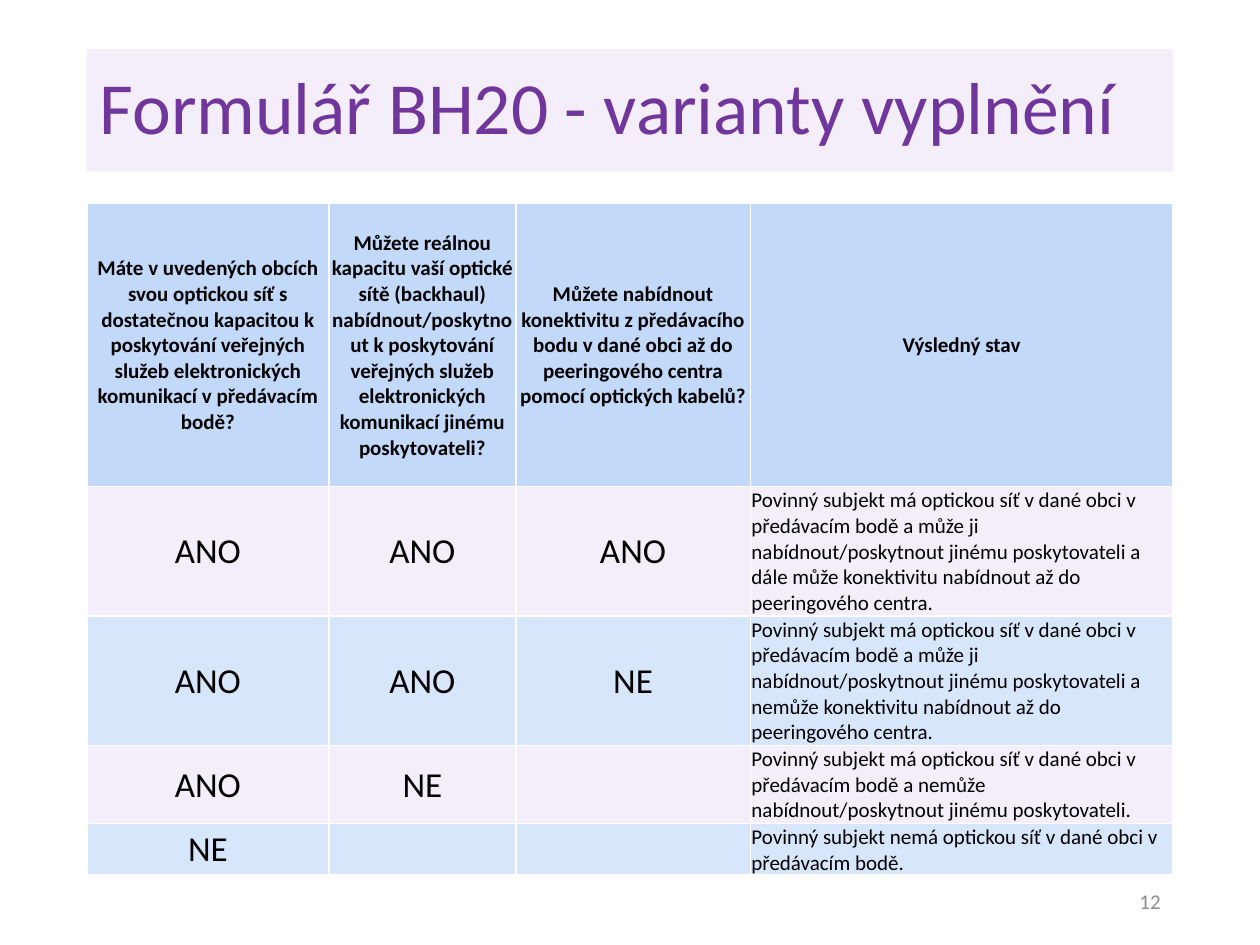
from dataclasses import dataclass

from lxml import etree
from pptx import Presentation
from pptx.dml.color import RGBColor
from pptx.enum.text import MSO_ANCHOR, MSO_AUTO_SIZE, PP_ALIGN
from pptx.oxml.ns import qn
from pptx.util import Inches, Pt

LEFT, CENTER, RIGHT = PP_ALIGN.LEFT, PP_ALIGN.CENTER, PP_ALIGN.RIGHT
TOP, MIDDLE = MSO_ANCHOR.TOP, MSO_ANCHOR.MIDDLE
NO_AUTOFIT = MSO_AUTO_SIZE.NONE
TITLE_ONLY = 5

FONT = "Calibri"
COLORS = {
    "purple": "70369B",
    "lilac": "EEE5F7",
    "blue": "C2D9FA",
    "black": "000000",
    "gray": "8C8C8C",
    "white": "FFFFFF",
}
BAND_OPACITY = 65
SLIDE_WIDTH, SLIDE_HEIGHT = Inches(10), Inches(7.5)


@dataclass(frozen=True)
class Area:
    """Place on the slide, in percent of its width and height."""
    left: float
    top: float
    width: float
    height: float

    def box(self) -> tuple:
        return (share_x(self.left), share_y(self.top),
                share_x(self.width), share_y(self.height))


@dataclass(frozen=True)
class TextStyle:
    size: float
    color: str = "black"
    bold: bool = False
    align: PP_ALIGN = LEFT
    anchor: MSO_ANCHOR = MIDDLE


@dataclass(frozen=True)
class Variant:
    """One way to fill in the form: the answers and the resulting state."""
    height: float
    answers: tuple
    result: str


def share_x(percent: float) -> int:
    return round(SLIDE_WIDTH * percent / 100)


def share_y(percent: float) -> int:
    return round(SLIDE_HEIGHT * percent / 100)


TITLE_AREA = Area(6.9, 5.2, 86.2, 12.93)
TABLE_AREA = Area(6.9, 21.5, 86.2, 71.2)
NUMBER_AREA = Area(70.6, 92.67, 22.5, 5.33)
COLUMN_WIDTHS = (19.2, 14.85, 18.6, 33.55)
HEADER_HEIGHT = 30

TITLE_STYLE = TextStyle(42, "purple")
NUMBER_STYLE = TextStyle(12, "gray", align=RIGHT)
HEADER_STYLE = TextStyle(12, bold=True, align=CENTER)
ANSWER_STYLE = TextStyle(20, align=CENTER)
RESULT_STYLE = TextStyle(12, anchor=TOP)

HEADERS = (
    "Máte v uvedených obcích svou optickou síť s dostatečnou kapacitou k "
    "poskytování veřejných služeb elektronických komunikací v předávacím bodě?",
    "Můžete reálnou kapacitu vaší optické sítě (backhaul) nabídnout/poskytnout "
    "k poskytování veřejných služeb elektronických komunikací jinému "
    "poskytovateli?",
    "Můžete nabídnout konektivitu z předávacího bodu v dané obci až do "
    "peeringového centra pomocí optických kabelů?",
    "Výsledný stav",
)
VARIANTS = (
    Variant(13.7, ("ANO", "ANO", "ANO"),
            "Povinný subjekt má optickou síť v dané obci v předávacím bodě a "
            "může ji nabídnout/poskytnout jinému poskytovateli a dále může "
            "konektivitu nabídnout až do peeringového centra."),
    Variant(13.7, ("ANO", "ANO", "NE"),
            "Povinný subjekt má optickou síť v dané obci v předávacím bodě a "
            "může ji nabídnout/poskytnout jinému poskytovateli a nemůže "
            "konektivitu nabídnout až do peeringového centra."),
    Variant(8.25, ("ANO", "NE", ""),
            "Povinný subjekt má optickou síť v dané obci v předávacím bodě a "
            "nemůže nabídnout/poskytnout jinému poskytovateli."),
    Variant(5.45, ("NE", "", ""),
            "Povinný subjekt nemá optickou síť v dané obci v předávacím bodě."),
)


def set_fill(target, properties, color: str, opacity: int = 100) -> None:
    """Fill a shape or cell; properties is its spPr or tcPr element."""
    target.fill.solid()
    target.fill.fore_color.rgb = RGBColor.from_string(COLORS[color])
    if opacity < 100:
        color_element = properties.find(qn("a:solidFill"))[0]
        etree.SubElement(color_element, qn("a:alpha"), val=str(opacity * 1000))


def write(text_frame, text: str, style: TextStyle):
    paragraph = text_frame.paragraphs[0]
    if text:
        paragraph.add_run().text = text
    paragraph.alignment = style.align
    font = paragraph.font
    font.name, font.size, font.bold = FONT, Pt(style.size), style.bold
    font.color.rgb = RGBColor.from_string(COLORS[style.color])
    return paragraph


def add_borders(properties) -> None:
    for side in ("a:lnL", "a:lnR", "a:lnT", "a:lnB"):
        line = etree.SubElement(properties, qn(side), w=str(Pt(1)))
        fill = etree.SubElement(line, qn("a:solidFill"))
        etree.SubElement(fill, qn("a:srgbClr"), val=COLORS["white"])


def fill_cell(cell, text: str, style: TextStyle, color: str, opacity: int) -> None:
    cell.margin_left = cell.margin_right = cell.margin_top = Inches(0.01)
    cell.margin_bottom = 0
    cell.vertical_anchor = style.anchor
    properties = cell._tc.tcPr
    add_borders(properties)
    set_fill(cell, properties, color, opacity)
    write(cell.text_frame, text, style)


def add_title(slide) -> None:
    title = slide.shapes.title
    title.left, title.top, title.width, title.height = TITLE_AREA.box()
    set_fill(title, title._element.spPr, "lilac", BAND_OPACITY)
    title.text_frame.auto_size = NO_AUTOFIT
    title.text_frame.vertical_anchor = TITLE_STYLE.anchor
    paragraph = write(title.text_frame, "Formulář BH20 - varianty vyplnění",
                      TITLE_STYLE)
    paragraph.line_spacing = 0.9


def add_variants_table(slide) -> None:
    table = slide.shapes.add_table(len(VARIANTS) + 1, len(HEADERS),
                                   *TABLE_AREA.box()).table
    for column, width in zip(table.columns, COLUMN_WIDTHS):
        column.width = share_x(width)

    # Header row
    table.rows[0].height = share_y(HEADER_HEIGHT)
    for cell, text in zip(table.rows[0].cells, HEADERS):
        fill_cell(cell, text, HEADER_STYLE, "blue", 100)

    # Alternating variant rows
    for index, variant in enumerate(VARIANTS):
        row = table.rows[index + 1]
        row.height = share_y(variant.height)
        color = ("lilac", "blue")[index % 2]
        *answer_cells, result_cell = row.cells
        for cell, answer in zip(answer_cells, variant.answers):
            fill_cell(cell, answer, ANSWER_STYLE, color, BAND_OPACITY)
        fill_cell(result_cell, variant.result, RESULT_STYLE, color, BAND_OPACITY)


def add_slide_number(slide) -> None:
    text_frame = slide.shapes.add_textbox(*NUMBER_AREA.box()).text_frame
    text_frame.word_wrap = True
    text_frame.vertical_anchor = NUMBER_STYLE.anchor
    write(text_frame, "12", NUMBER_STYLE)


def main() -> None:
    presentation = Presentation()
    presentation.slide_width, presentation.slide_height = SLIDE_WIDTH, SLIDE_HEIGHT
    slide = presentation.slides.add_slide(presentation.slide_layouts[TITLE_ONLY])
    add_slide_number(slide)
    add_title(slide)
    add_variants_table(slide)
    presentation.save("out.pptx")


if __name__ == "__main__":
    main()
